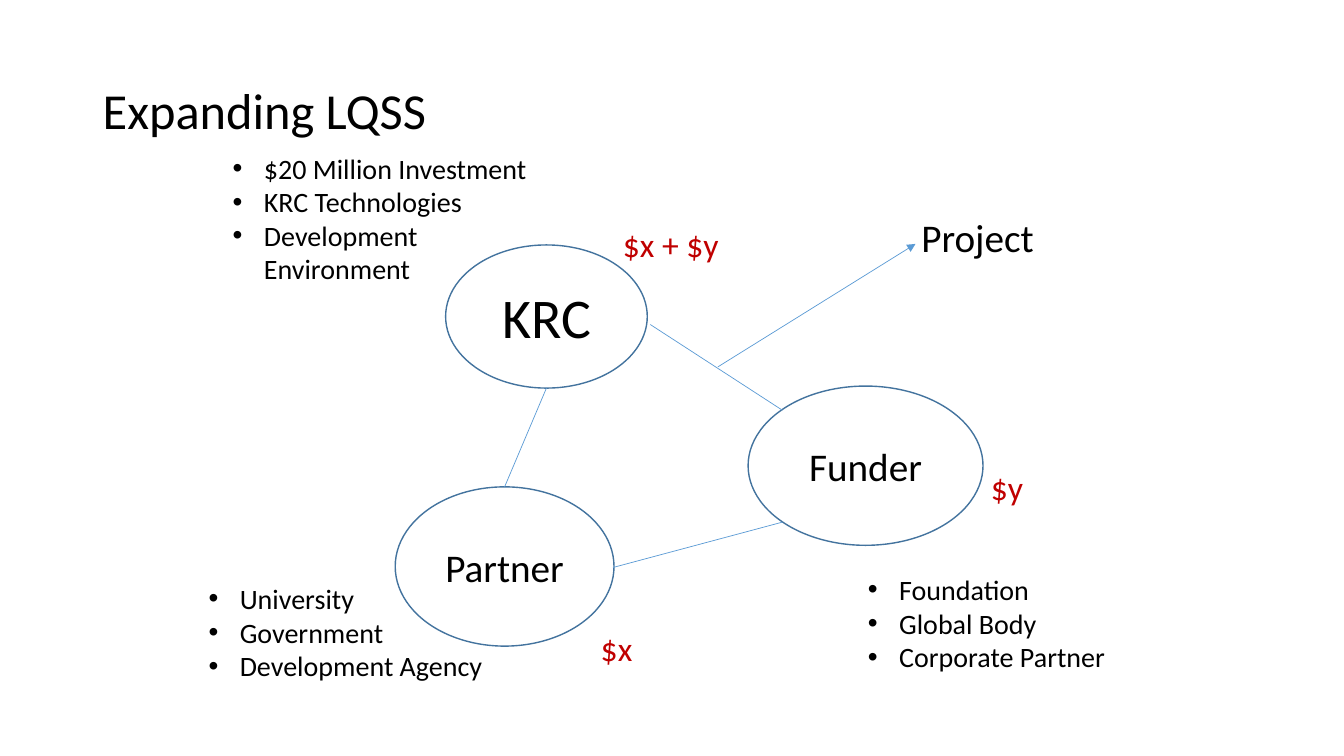
"""Build the "Expanding LQSS" slide: three linked parties funding a project."""
from lxml import etree
from pptx import Presentation, util as u
from pptx.dml.color import RGBColor
from pptx.enum import shapes, text
from pptx.oxml import ns

BLACK = RGBColor(0x00, 0x00, 0x00)
WHITE = RGBColor(0xFF, 0xFF, 0xFF)
RED = RGBColor(0xC0, 0x00, 0x00)
OUTLINE = RGBColor(0x43, 0x73, 0x9E)
LINK = RGBColor(0x5B, 0x9B, 0xD5)
BULLET_INDENT = u.Inches(0.31)

deck = Presentation()
deck.slide_width, deck.slide_height = u.Inches(13.33), u.Inches(7.5)
slide = deck.slides.add_slide(deck.slide_layouts[6])


def write(holder, wording, size=28, color=BLACK, align=text.PP_ALIGN.LEFT,
          anchor=text.MSO_ANCHOR.TOP, spacing=1.0, bullets=False):
    frame = holder.text_frame
    frame.word_wrap = True
    frame.vertical_anchor = anchor
    frame.text = wording
    for line in frame.paragraphs:
        line.alignment, line.line_spacing = align, spacing
        font = line.runs[0].font
        font.name, font.size, font.color.rgb = "Calibri", u.Pt(size), color
        if bullets:
            layout = line._p.get_or_add_pPr()
            layout.set("marL", str(BULLET_INDENT))
            layout.set("indent", str(-BULLET_INDENT))
            etree.SubElement(layout, ns.qn("a:buFont"), typeface="Arial")
            etree.SubElement(layout, ns.qn("a:buChar"), char="•")


def add_box(*place):
    return slide.shapes.add_textbox(*map(u.Inches, place))


write(add_box(0.92, 0.4, 11.5, 1.45), "Expanding LQSS", size=36,
      anchor=text.MSO_ANCHOR.MIDDLE, spacing=0.9)

parties = {}
for party, size, place in (
    ("KRC", 40, (4.42, 2.43, 2, 1.42)),
    ("Funder", 28, (7.42, 3.83, 2.33, 1.58)),
    ("Partner", 28, (3.92, 4.83, 2.17, 1.58)),
):
    oval = slide.shapes.add_shape(shapes.MSO_SHAPE.OVAL, *map(u.Inches, place))
    oval.shadow.inherit = False
    oval.fill.solid()
    oval.fill.fore_color.rgb = WHITE
    oval.line.color.rgb, oval.line.width = OUTLINE, u.Pt(1)
    write(oval, party, size=size, align=text.PP_ALIGN.CENTER,
          anchor=text.MSO_ANCHOR.MIDDLE)
    parties[party] = oval

for left, top, height, items in (
    (2.21, 1.45, 1.45, ("$20 Million Investment", "KRC Technologies", "Development Environment")),
    (1.97, 5.72, 1.11, ("University", "Government", "Development Agency")),
    (8.51, 5.63, 1.11, ("Foundation", "Global Body", "Corporate Partner")),
):
    write(add_box(left, top, 3.17, height), "\n".join(items), size=20, bullets=True)

for left, top, amount in ((6.08, 2.17, "$x + $y"), (5.86, 6.18, "$x"), (9.73, 4.58, "$y")):
    write(add_box(left, top, 1.92, 0.5), amount, size=24, color=RED)

links = []
for ends in (
    (5.42, 3.85, 5, 4.83),
    (6.45, 3.22, 7.76, 4.07),
    (6.08, 5.63, 7.76, 5.18),
    (7.12, 3.64, 9.08, 2.42),
):
    link = slide.shapes.add_connector(shapes.MSO_CONNECTOR.STRAIGHT, *map(u.Inches, ends))
    link.line.color.rgb, link.line.width = LINK, u.Pt(0.5)
    etree.SubElement(link._element.spPr, ns.qn("a:effectLst"))
    links.append(link)

krc_to_partner, *_, to_project = links
krc_to_partner.end_connect(parties["Partner"], 0)
etree.SubElement(to_project.line._get_or_add_ln(), ns.qn("a:tailEnd"), type="triangle")

write(add_box(9.04, 2.07, 2, 0.57), "Project")

deck.save("out.pptx")
